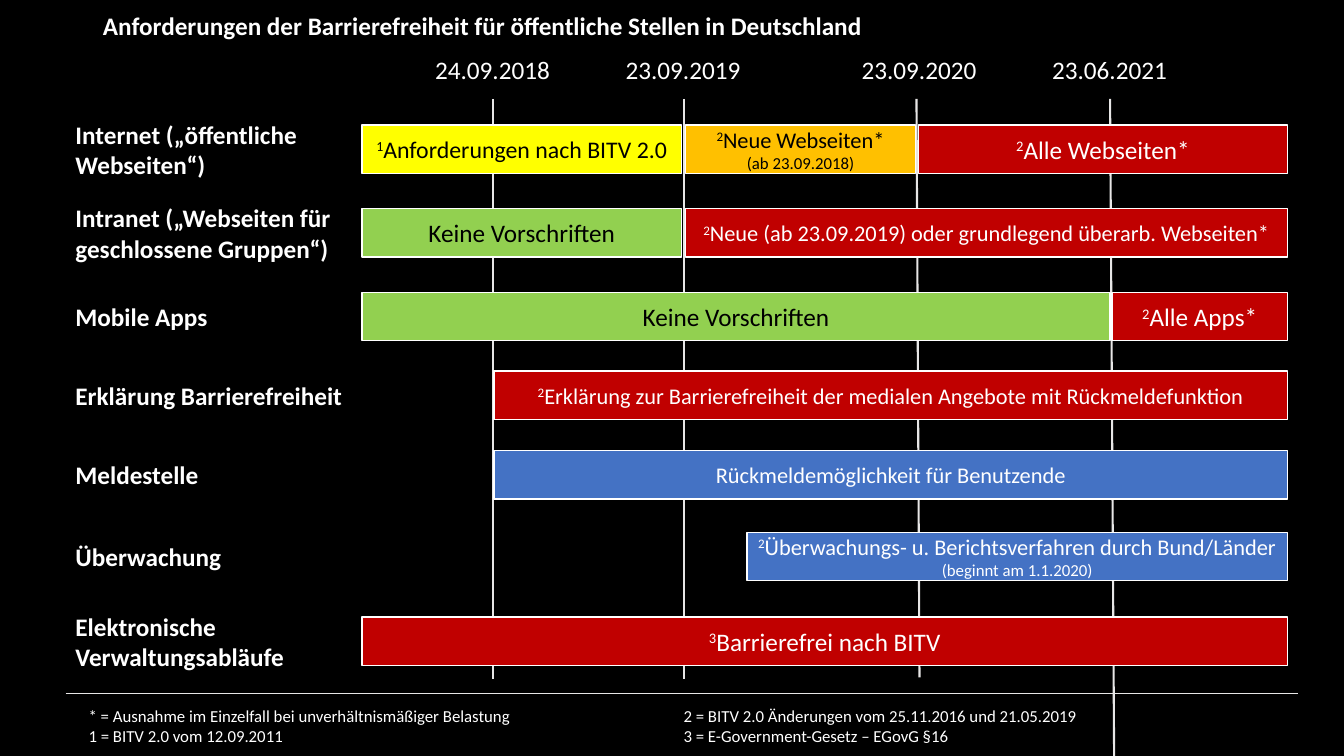
from dataclasses import dataclass

from lxml.etree import SubElement
from pptx import Presentation
from pptx.dml.color import RGBColor
from pptx.enum.shapes import MSO_CONNECTOR as Connector, MSO_SHAPE as Shape
from pptx.enum.text import MSO_ANCHOR as Anchor, MSO_AUTO_SIZE as AutoSize, PP_ALIGN as Align
from pptx.oxml.ns import qn
from pptx.util import Inches, Pt


@dataclass(frozen=True)
class Theme:
    font: str = "Calibri"
    black: RGBColor = RGBColor(0x00, 0x00, 0x00)
    white: RGBColor = RGBColor(0xFF, 0xFF, 0xFF)
    rule: RGBColor = RGBColor(0xE7, 0xE6, 0xE6)
    yellow: RGBColor = RGBColor(0xFF, 0xFF, 0x00)
    orange: RGBColor = RGBColor(0xFF, 0xC0, 0x00)
    red: RGBColor = RGBColor(0xC0, 0x00, 0x00)
    green: RGBColor = RGBColor(0x92, 0xD0, 0x50)
    blue: RGBColor = RGBColor(0x44, 0x72, 0xC4)
    large: Pt = Pt(18)
    medium: Pt = Pt(17)
    normal: Pt = Pt(16)
    small: Pt = Pt(12)


theme = Theme()


def set_font(paragraph, size, color=theme.white, bold=False):
    font = paragraph.font
    font.name, font.size, font.bold = theme.font, size, bold
    font.color.rgb = color


def add_line(start, end, width):
    """Draw a rule between two (x, y) points given in inches."""
    line = slide.shapes.add_connector(Connector.STRAIGHT, *map(Inches, start + end))
    line.line.color.rgb = theme.rule
    line.line.width = Pt(width)
    SubElement(line._element.spPr, qn("a:effectLst"))


presentation = Presentation()
presentation.slide_width = Inches(13.33)
presentation.slide_height = Inches(7.5)
slide = presentation.slides.add_slide(presentation.slide_layouts[5])
slide.background.fill.solid()
slide.background.fill.fore_color.rgb = theme.black

# Title
title = slide.shapes.title
title.left, title.top, title.width, title.height = map(Inches, (0.92, 0.03, 11.5, 0.44))
title.text_frame.text = "Anforderungen der Barrierefreiheit für öffentliche Stellen in Deutschland"
title.text_frame.auto_size = AutoSize.NONE
title.text_frame.vertical_anchor = Anchor.MIDDLE
title.text_frame.paragraphs[0].alignment = Align.LEFT
set_font(title.text_frame.paragraphs[0], theme.large, bold=True)

# Deadlines: date, left of the date, line top x, line bottom x and y
deadlines = [
    ("24.09.2018", 4.17, 4.89, 4.89, 6.74),
    ("23.09.2019", 6.06, 6.78, 6.78, 6.74),
    ("23.09.2020", 8.4, 9.09, 9.12, 6.72),
    ("23.06.2021", 10.29, 11.01, 11.05, 7.5),
]
for date, left, top_x, bottom_x, bottom_y in deadlines:
    add_line((top_x, 0.98), (bottom_x, bottom_y), 1.5)
    box = slide.shapes.add_textbox(Inches(left), Inches(0.49), Inches(1.43), Inches(0.4))
    box.text_frame.word_wrap = True
    box.text_frame.text = date
    box.text_frame.paragraphs[0].alignment = Align.CENTER
    set_font(box.text_frame.paragraphs[0], theme.large)

# Rows: label, label height, bar top, bars
# Bars: left, right, fill, text colour, size, footnote mark, text, second line
BAR_HEIGHT = 0.48
START, END = 3.59, 12.77
rows = [
    ("Internet („öffentliche Webseiten“)", 0.71, 1.24, [
        (START, 6.76, theme.yellow, theme.black, theme.medium, "1", "Anforderungen nach BITV 2.0", ""),
        (6.8, 9.08, theme.orange, theme.black, theme.normal, "2", "Neue Webseiten*", "(ab 23.09.2018)"),
        (9.11, END, theme.red, theme.white, theme.large, "2", "Alle Webseiten*", ""),
    ]),
    ("Intranet („Webseiten für geschlossene Gruppen“)", 0.71, 2.07, [
        (START, 6.76, theme.green, theme.black, theme.large, "", "Keine Vorschriften", ""),
        (6.8, END, theme.red, theme.white, theme.normal, "2",
         "Neue (ab 23.09.2019) oder grundlegend überarb. Webseiten*", ""),
    ]),
    ("Mobile Apps", 0.4, 2.9, [
        (START, 11.01, theme.green, theme.black, theme.large, "", "Keine Vorschriften", ""),
        (11.03, END, theme.red, theme.white, theme.large, "2", "Alle Apps*", ""),
    ]),
    ("Erklärung Barrierefreiheit", 0.4, 3.68, [
        (4.9, END, theme.red, theme.white, theme.normal, "2",
         "Erklärung zur Barrierefreiheit der medialen Angebote mit Rückmeldefunktion", ""),
    ]),
    ("Meldestelle", 0.4, 4.47, [
        (4.9, END, theme.blue, theme.white, theme.normal, "", "Rückmeldemöglichkeit für Benutzende", ""),
    ]),
    ("Überwachung", 0.4, 5.28, [
        (7.41, END, theme.blue, theme.white, theme.normal, "2",
         "Überwachungs- u. Berichtsverfahren durch Bund/Länder", "(beginnt am 1.1.2020)"),
    ]),
    ("Elektronische Verwaltungsabläufe", 0.71, 6.12, [
        (START, END, theme.red, theme.white, theme.large, "3", "Barrierefrei nach BITV", ""),
    ]),
]
for label, label_height, top, bars in rows:
    label_top = top + (BAR_HEIGHT - label_height) / 2
    box = slide.shapes.add_textbox(Inches(0.65), Inches(label_top), Inches(2.94), Inches(label_height))
    box.text_frame.word_wrap = True
    box.text_frame.vertical_anchor = Anchor.MIDDLE
    box.text_frame.text = label
    set_font(box.text_frame.paragraphs[0], theme.large, bold=True)

    for left, right, fill, color, size, mark, text, second_line in bars:
        bar = slide.shapes.add_shape(
            Shape.RECTANGLE, Inches(left), Inches(top), Inches(right - left), Inches(BAR_HEIGHT))
        bar.shadow.inherit = False
        bar.fill.solid()
        bar.fill.fore_color.rgb = fill
        bar.line.color.rgb = theme.white
        bar.line.width = Pt(1)
        frame = bar.text_frame
        frame.word_wrap = True
        frame.vertical_anchor = Anchor.MIDDLE
        frame.margin_left = frame.margin_right = frame.margin_top = frame.margin_bottom = 0
        paragraph = frame.paragraphs[0]
        paragraph.alignment = Align.CENTER
        set_font(paragraph, size, color)
        if mark:
            run = paragraph.add_run()
            run.text = mark
            run._r.get_or_add_rPr().set("baseline", "30000")
        paragraph.add_run().text = text
        if second_line:
            paragraph.add_line_break()
            run = paragraph.add_run()
            run.text = second_line
            run.font.size = theme.small

# Footnotes
add_line((0.65, 6.88), (12.87, 6.88), 0.5)
footnotes = slide.shapes.add_textbox(Inches(0.78), Inches(6.95), Inches(12), Inches(0.51))
frame = footnotes.text_frame
frame.word_wrap = True
frame.auto_size = AutoSize.SHAPE_TO_FIT_TEXT
frame._txBody.bodyPr.set("numCol", "2")
frame.text = "\n".join([
    "* = Ausnahme im Einzelfall bei unverhältnismäßiger Belastung",
    "1 = BITV 2.0 vom 12.09.2011",
    "2 = BITV 2.0 Änderungen vom 25.11.2016 und 21.05.2019",
    "3 = E-Government-Gesetz – EGovG §16",
])
for paragraph in frame.paragraphs:
    set_font(paragraph, theme.small)

presentation.save("out.pptx")
